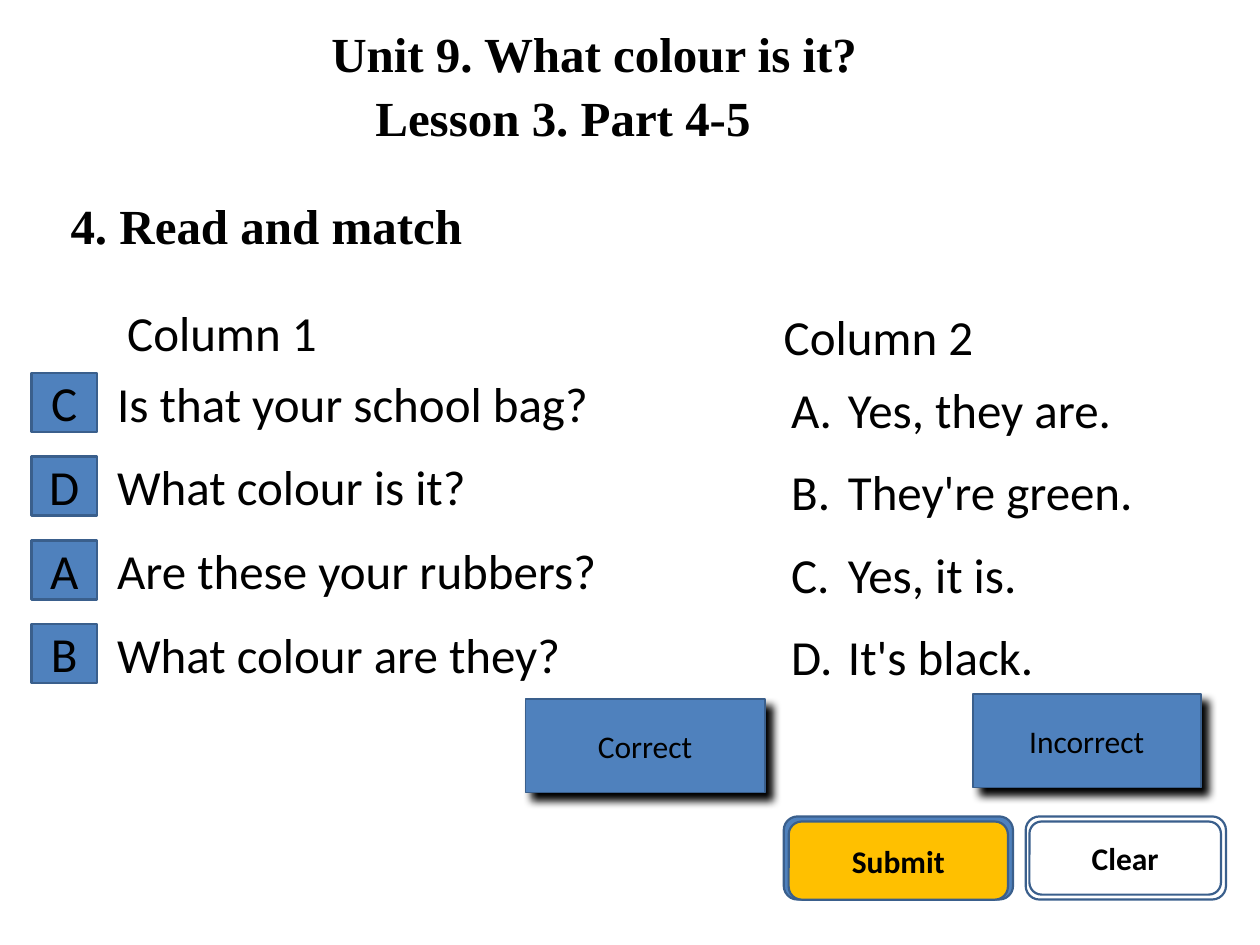
from dataclasses import dataclass, replace
from typing import Optional

from lxml.etree import SubElement
from pptx import Presentation
from pptx.dml.color import RGBColor
from pptx.enum.shapes import MSO_SHAPE as Preset
from pptx.enum.text import MSO_ANCHOR as Anchor, MSO_AUTO_SIZE as AutoSize, PP_ALIGN as Align
from pptx.oxml.ns import qn
from pptx.util import Emu, Inches, Pt

WIDTH, HEIGHT = Inches(10), Inches(7.5)
COLUMN, ROW = WIDTH // 1000, HEIGHT // 750
TITLE_ONLY = 5
COLORS = {"text": "000000", "blue": "4F81BD", "outline": "3A5F8C",
          "gold": "FFC000", "shadow": "000000"}


@dataclass(frozen=True)
class Area:
    left: float
    top: float
    width: float
    height: float

    def lengths(self) -> tuple[Emu, Emu, Emu, Emu]:
        return (Emu(round(self.left * COLUMN)), Emu(round(self.top * ROW)),
                Emu(round(self.width * COLUMN)), Emu(round(self.height * ROW)))


@dataclass(frozen=True)
class Style:
    size: int = 28
    font: str = "Calibri"
    bold: bool = False
    align: Align = Align.LEFT
    anchor: Anchor = Anchor.TOP


@dataclass(frozen=True)
class Question:
    letter: str
    text: str


@dataclass(frozen=True)
class Feedback:
    text: str
    area: Area


@dataclass(frozen=True)
class Button:
    text: str
    outer: Area
    inner: Area
    outer_fill: Optional[str] = None
    inner_fill: Optional[str] = None


PLAIN = Style()
MIDDLE = Style(anchor=Anchor.MIDDLE)
CENTERED = Style(align=Align.CENTER)
LABEL = Style(size=18, align=Align.CENTER, anchor=Anchor.MIDDLE)
HEADING = Style(font="Times New Roman", bold=True)

QUESTIONS = [
    Question("C", "Is that your school bag?"),
    Question("D", "What colour is it?"),
    Question("A", "Are these your rubbers?"),
    Question("B", "What colour are they?"),
]
ANSWERS = ["Yes, they are.", "They're green.", "Yes, it is.", "It's black."]
FEEDBACK = [
    Feedback("Correct", Area(417, 555, 190, 74)),
    Feedback("Incorrect", Area(772, 551, 181, 74)),
]
BUTTONS = [
    Button("Submit", Area(622, 648, 182, 66), Area(626, 652, 174, 62), "blue", "gold"),
    Button("Clear", Area(814, 648, 159, 66), Area(817, 652, 152, 58)),
]


def color(name: str) -> RGBColor:
    return RGBColor.from_string(COLORS[name])


def write(shape, text: str, style: Style) -> None:
    frame = shape.text_frame
    frame.text = text
    frame.word_wrap = True
    frame.auto_size = AutoSize.NONE
    frame.vertical_anchor = style.anchor
    frame.margin_left = frame.margin_top = frame.margin_right = frame.margin_bottom = 0
    for para in frame.paragraphs:
        para.alignment = style.align
        for span in para.runs:
            span.font.name = style.font
            span.font.size = Pt(style.size)
            span.font.bold = style.bold
            span.font.color.rgb = color("text")


def draw_text(shapes, area: Area, text: str, style: Style = PLAIN):
    box = shapes.add_textbox(*area.lengths())
    write(box, text, style)
    return box


def draw_box(shapes, preset: Preset, area: Area, fill: Optional[str], line_width: float):
    box = shapes.add_shape(preset, *area.lengths())
    box.shadow.inherit = False
    if fill:
        box.fill.solid()
        box.fill.fore_color.rgb = color(fill)
    else:
        box.fill.background()
    box.line.color.rgb = color("outline")
    box.line.width = Pt(line_width)
    return box


def cast_shadow(box) -> None:
    effects = box.element.spPr.find(qn("a:effectLst"))
    shadow = SubElement(effects, qn("a:outerShdw"), blurRad=str(Pt(5)), dist=str(Pt(5.7)),
                        dir=str(45 * 60000), algn="tl", rotWithShape="0")
    SubElement(shadow, qn("a:srgbClr"), val=COLORS["shadow"])


def draw_heading(page) -> None:
    box = draw_text(page.shapes, Area(75, 19, 700, 118),
                    "Unit 9. What colour is it?\nLesson 3. Part 4-5", HEADING)
    for para, indent in zip(box.text_frame.paragraphs, (1.88, 2.23)):
        para._p.get_or_add_pPr().set("marL", str(Inches(indent)))
    box.text_frame.paragraphs[1].space_before = Pt(2.5)


def draw_title(page) -> None:
    title = page.shapes.title
    title.left, title.top, title.width, title.height = Area(56, 116, 348, 125).lengths()
    write(title, "4. Read and match", replace(HEADING, anchor=Anchor.MIDDLE))


def draw_answer(page, index: int, text: str) -> None:
    group = page.shapes.add_group_shape().shapes
    top = 301 + 65.4 * index
    draw_text(group, Area(628, top, 36, 47), f"{'ABCD'[index]}.")
    draw_text(group, Area(673, top, 295, 47), text)


def draw_question(page, index: int, question: Question) -> None:
    group = page.shapes.add_group_shape().shapes
    top = 296 + 66.4 * index
    tile = draw_box(group, Preset.RECTANGLE, Area(25, top, 52, 47), "blue", 1.5)
    write(tile, question.letter, CENTERED)
    draw_text(group, Area(93, top, 425, 47), question.text, MIDDLE)


def draw_feedback(page, feedback: Feedback) -> None:
    box = draw_box(page.shapes, Preset.RECTANGLE, feedback.area, "blue", 1)
    cast_shadow(box)
    write(box, feedback.text, LABEL)


def draw_button(page, button: Button) -> None:
    group = page.shapes.add_group_shape().shapes
    draw_box(group, Preset.ROUNDED_RECTANGLE, button.outer, button.outer_fill, 1.25)
    face = draw_box(group, Preset.ROUNDED_RECTANGLE, button.inner, button.inner_fill, 1.25)
    write(face, button.text, replace(LABEL, bold=True))


def main() -> None:
    deck = Presentation()
    deck.slide_width, deck.slide_height = WIDTH, HEIGHT
    page = deck.slides.add_slide(deck.slide_layouts[TITLE_ONLY])
    draw_title(page)
    draw_text(page.shapes, Area(101, 240, 192, 45), "Column 1")
    draw_text(page.shapes, Area(622, 243, 181, 45), "Column 2")
    for index, answer in enumerate(ANSWERS):
        draw_answer(page, index, answer)
    for index, question in enumerate(QUESTIONS):
        draw_question(page, index, question)
    for feedback in FEEDBACK:
        draw_feedback(page, feedback)
    for button in BUTTONS:
        draw_button(page, button)
    draw_heading(page)
    deck.save("out.pptx")


if __name__ == "__main__":
    main()
